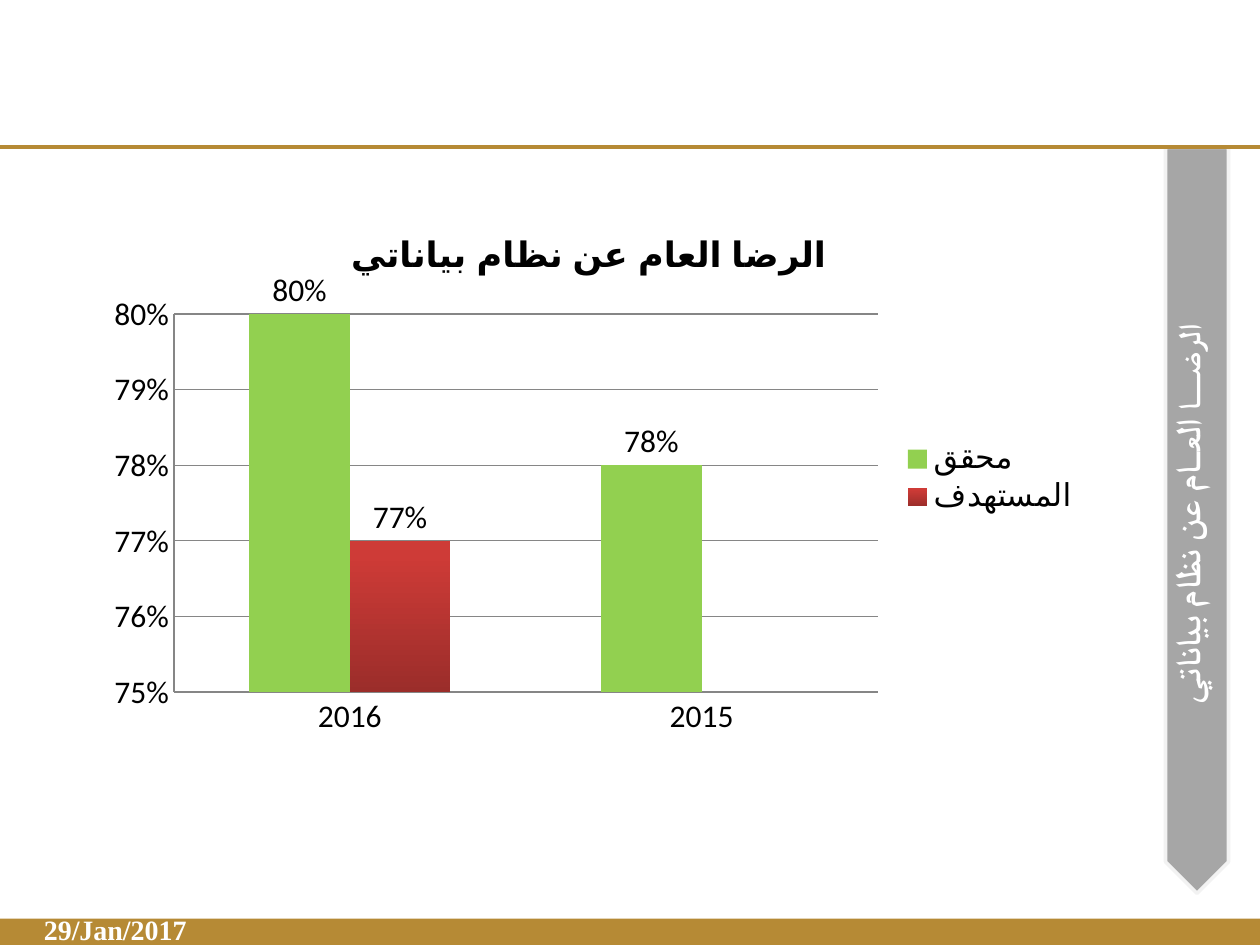
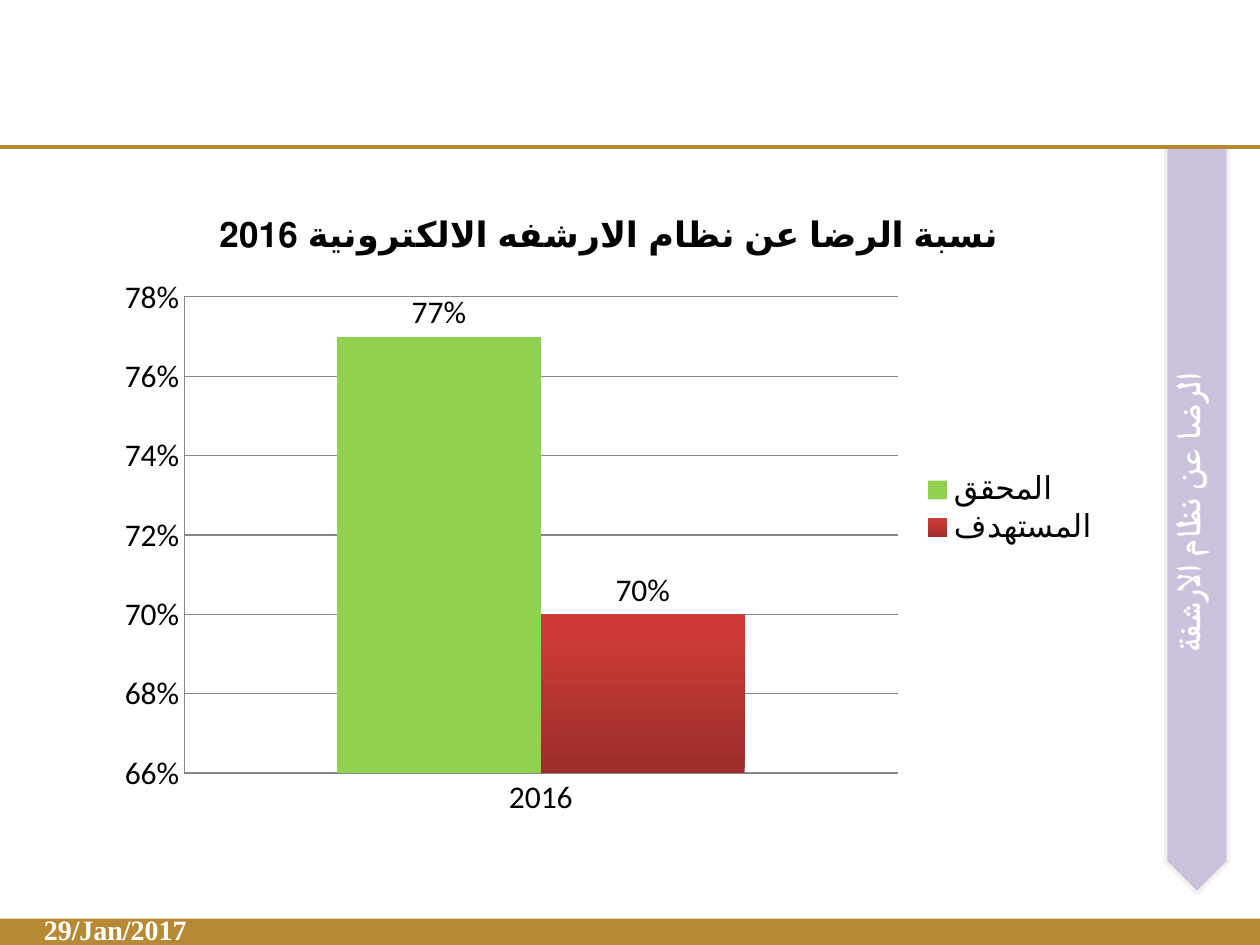
from pptx import Presentation
from pptx.chart.data import CategoryChartData
from pptx.dml.color import RGBColor
from pptx.enum.chart import XL_CHART_TYPE, XL_LABEL_POSITION, XL_LEGEND_POSITION, XL_TICK_MARK
from pptx.enum.shapes import MSO_CONNECTOR, MSO_SHAPE
from pptx.enum.text import MSO_AUTO_SIZE, PP_ALIGN
from pptx.oxml.ns import qn
from pptx.util import Inches, Pt
from lxml.etree import SubElement

GOLD = RGBColor(0xB6, 0x8A, 0x35)
WHITE = RGBColor(0xFF, 0xFF, 0xFF)
BLACK = RGBColor(0, 0, 0)
GREY = RGBColor(0xA6, 0xA6, 0xA6)
LILAC = RGBColor(0xCC, 0xC1, 0xDA)
RIBBON_EDGE = RGBColor(0xF2, 0xF2, 0xF2)
AXIS_GREY = RGBColor(0x86, 0x86, 0x86)
GREEN = RGBColor(0x92, 0xD0, 0x50)
DARK_RED = RGBColor(0x9B, 0x2D, 0x2A)
BRIGHT_RED = RGBColor(0xCE, 0x3B, 0x37)


def inches(*values):
    """Convert several numbers to lengths."""
    return [Inches(v) for v in values]


def add_block(s, kind, box, fill, edge=None):
    """Add a flat filled shape with an optional edge."""
    sp = s.shapes.add_shape(kind, *inches(*box))
    sp.shadow.inherit = False
    sp.fill.solid()
    sp.fill.fore_color.rgb = fill
    if edge is None:
        sp.line.fill.background()
    else:
        sp.line.color.rgb = edge
        sp.line.width = Pt(2)
    return sp


def add_text(s, box, runs, font, align=None, vert=None):
    """Add a bold white text box from (text, size) runs."""
    sp = s.shapes.add_textbox(*inches(*box))
    tf = sp.text_frame
    tf.word_wrap = True
    tf.auto_size = MSO_AUTO_SIZE.SHAPE_TO_FIT_TEXT
    if vert:
        tf._txBody.bodyPr.set("vert", vert)
    p = tf.paragraphs[0]
    p.alignment = align
    p.font.name = font
    p.font.bold = True
    p.font.color.rgb = WHITE
    for text, size in runs:
        r = p.add_run()
        r.text = text
        r.font.size = Pt(size)
        SubElement(r._r.get_or_add_rPr(), qn("a:cs")).set("typeface", font)


def add_footer(s):
    """Add the gold band with the date."""
    add_block(s, MSO_SHAPE.RECTANGLE, (0, 7.29, 10, 0.21), GOLD)
    add_text(s, (0.25, 7.19, 2.33, 0.37), [("29/Jan/2017", 16)], "Times New Roman")


def add_ribbon(s, color, runs, top):
    """Add the downward side ribbon with its vertical heading."""
    sp = add_block(s, MSO_SHAPE.PENTAGON, (6.54, 3.88, 5.92, 0.5), color, RIBBON_EDGE)
    sp.rotation = 90
    add_text(s, (9.2, top, 0.54, 6.75 - top), runs, "Calibri", PP_ALIGN.CENTER, "vert270")


def add_header_line(s):
    """Add the gold rule across the slide."""
    line = s.shapes.add_connector(MSO_CONNECTOR.STRAIGHT, *inches(0, 1.17, 10, 1.17))
    line.line.color.rgb = GOLD
    line.line.width = Pt(2.25)
    SubElement(line._element.spPr, qn("a:effectLst"))


def style_axis(axis):
    """Give an axis a grey line without tick marks."""
    axis.major_tick_mark = XL_TICK_MARK.NONE
    axis.minor_tick_mark = XL_TICK_MARK.NONE
    axis.format.line.color.rgb = AXIS_GREY


def fill_target(fill):
    """Shade the target columns from dark to bright red."""
    fill.gradient()
    fill.gradient_angle = 90
    for stop, color, position in zip(fill.gradient_stops, (DARK_RED, BRIGHT_RED), (0, 0.9)):
        stop.color.rgb = color
        stop.position = position


def add_satisfaction_chart(s, box, title, categories, series, scale):
    """Add a chart of achieved against target satisfaction."""
    data = CategoryChartData(number_format="0%")
    data.categories = categories
    for name, values in series:
        data.add_series(name, values)
    chart = s.shapes.add_chart(XL_CHART_TYPE.COLUMN_CLUSTERED, *inches(*box), data).chart
    chart.font.name = "Calibri"
    chart.font.size = Pt(18)
    chart.font.color.rgb = BLACK
    chart.has_title = True
    p = chart.chart_title.text_frame.paragraphs[0]
    p.text = title
    p.font.size = Pt(20)
    p.font.bold = True
    chart.chart_title.include_in_layout = False
    chart.has_legend = True
    chart.legend.position = XL_LEGEND_POSITION.RIGHT
    chart.legend.include_in_layout = False

    style_axis(chart.category_axis)
    axis = chart.value_axis
    style_axis(axis)
    axis.minimum_scale, axis.maximum_scale, axis.major_unit = scale
    axis.has_major_gridlines = True
    axis.major_gridlines.format.line.color.rgb = AXIS_GREY
    axis.tick_labels.number_format = "0%"
    axis.tick_labels.number_format_is_linked = False

    plot = chart.plots[0]
    plot.gap_width = 150
    plot.vary_by_categories = False
    achieved, target = plot.series
    achieved.format.fill.solid()
    achieved.format.fill.fore_color.rgb = GREEN
    fill_target(target.format.fill)
    for ser in plot.series:
        ser.invert_if_negative = False
        ser.data_labels.show_value = True
        ser.data_labels.position = XL_LABEL_POSITION.OUTSIDE_END


def add_slide(prs, color, heading, heading_top, **chart):
    """Add one satisfaction slide."""
    s = prs.slides.add_slide(prs.slide_layouts[6])
    add_footer(s)
    add_ribbon(s, color, heading, heading_top)
    add_header_line(s)
    add_satisfaction_chart(s, **chart)


def main():
    """Build and save the presentation."""
    prs = Presentation()
    prs.slide_width, prs.slide_height = inches(10, 7.5)
    add_slide(
        prs, GREY, [("الرضــا ", 18), ("العـام عن نظام بياناتي", 20)], 1.42,
        box=(0.75, 1.67, 7.92, 4.25),
        title="الرضا العام عن نظام بياناتي ",
        categories=["2016", "2015"],
        series=[("محقق", (0.8, 0.78)), ("المستهدف", (0.77, None))],
        scale=(0.75, 0.8, 0.01),
    )
    add_slide(
        prs, LILAC, [("الرضا عن نظام الارشفة ", 20)], 1.33,
        box=(0.83, 1.5, 8, 5.08),
        title="نسبة الرضا عن نظام الارشفه الالكترونية 2016",
        categories=["2016"],
        series=[("المحقق", (0.77,)), ("المستهدف", (0.7,))],
        scale=(0.66, 0.78, 0.02),
    )
    prs.save("out.pptx")


if __name__ == "__main__":
    main()
